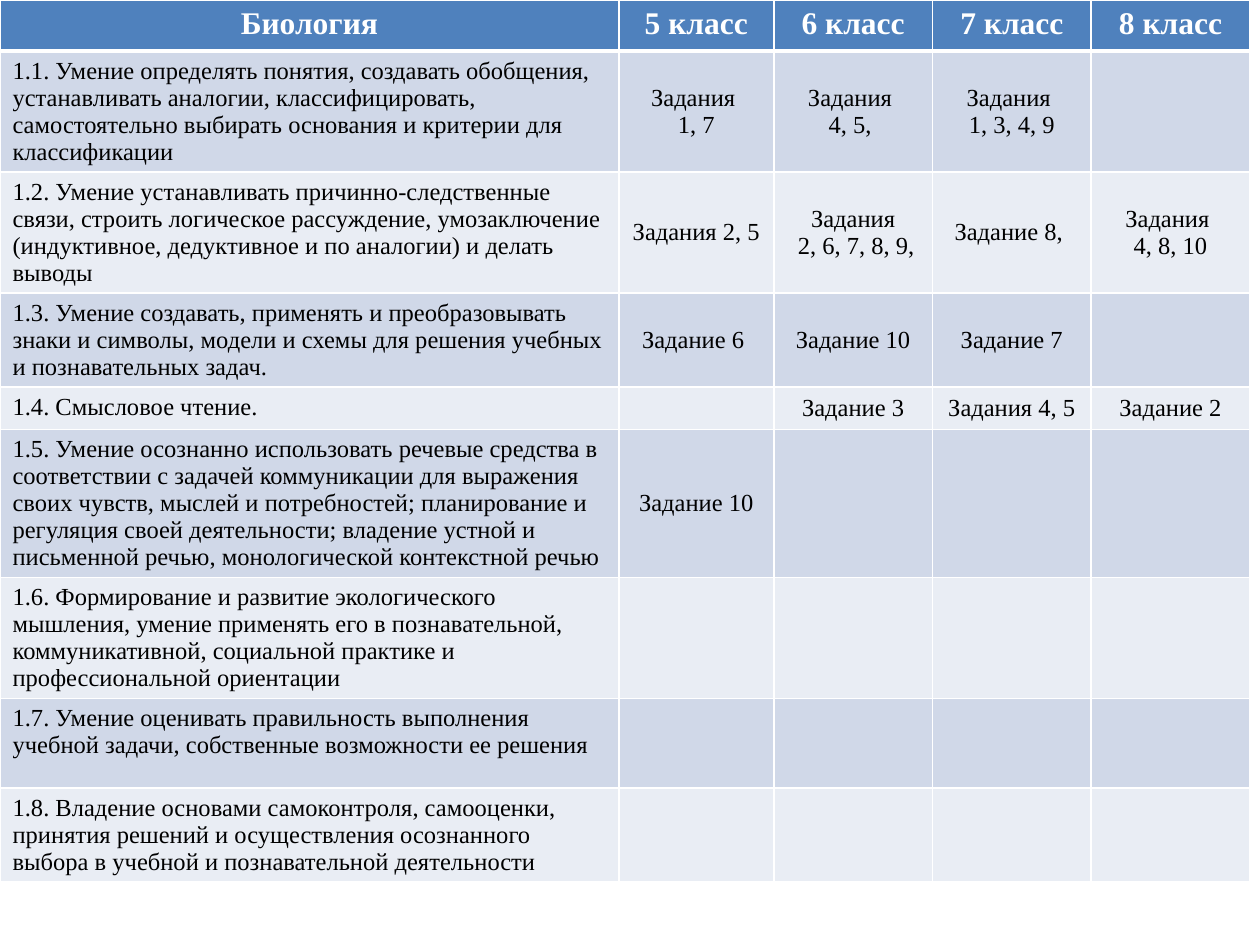
from dataclasses import dataclass

from lxml import etree
from pptx import Presentation
from pptx.dml.color import RGBColor
from pptx.enum.text import MSO_ANCHOR, PP_ALIGN
from pptx.oxml.ns import qn
from pptx.slide import Slide
from pptx.table import _Cell
from pptx.util import Pt

CENTER, LEFT = PP_ALIGN.CENTER, PP_ALIGN.LEFT
TOP, MIDDLE = MSO_ANCHOR.TOP, MSO_ANCHOR.MIDDLE


@dataclass(frozen=True)
class Theme:
    font: str = "Times New Roman"
    head_size: int = 18
    body_size: int = 14
    head_fill: str = "4F81BD"
    bands: tuple[str, str] = ("D0D8E8", "E9EDF4")
    head_text: str = "FFFFFF"
    body_text: str = "000000"
    border: str = "FFFFFF"
    thin: int = 1
    thick: int = 3


@dataclass(frozen=True)
class Skill:
    height: float
    text: str
    tasks: tuple[str, ...] = ("", "", "", "")


@dataclass(frozen=True)
class CellStyle:
    fill: str
    color: str
    size: int
    bold: bool
    align: PP_ALIGN
    anchor: MSO_ANCHOR
    top: int
    bottom: int


THEME = Theme()
COL_WIDTHS = (353.6, 88.6, 90.7, 90.7, 90.7)
HEAD_HEIGHT = 29.2
TABLE_HEIGHT = 534
HEADINGS = ("Биология", *(f"{grade} класс" for grade in range(5, 9)))
SKILLS = (
    Skill(38.2, "1.1. Умение определять понятия, создавать обобщения, устанавливать аналогии, "
          "классифицировать, самостоятельно выбирать основания и критерии для классификации",
          ("Задания \n1, 7", "Задания \n4, 5, ", "Задания \n1, 3, 4, 9", "")),
    Skill(39.6, "1.2. Умение устанавливать причинно-следственные связи, строить логическое "
          "рассуждение, умозаключение (индуктивное, дедуктивное и по аналогии) и делать выводы",
          ("Задания 2, 5 ", "Задания\n 2, 6, 7, 8, 9,", "Задание 8, ", "Задания \n4, 8, 10")),
    Skill(29.2, "1.3. Умение создавать, применять и преобразовывать знаки и символы, модели "
          "и схемы для решения учебных и познавательных задач.",
          ("Задание 6 ", "Задание 10", "Задание 7", "")),
    Skill(15.8, "1.4. Смысловое чтение.",
          ("", "Задание 3", "Задания 4, 5", "Задание 2")),
    Skill(41.8, "1.5. Умение осознанно использовать речевые средства в соответствии с задачей "
          "коммуникации для выражения своих чувств, мыслей и потребностей; планирование и "
          "регуляция своей деятельности; владение устной и письменной речью, "
          "монологической контекстной речью",
          ("Задание 10", "", "", "")),
    Skill(45.4, "1.6. Формирование и развитие экологического мышления, умение применять его в "
          "познавательной, коммуникативной, социальной практике и профессиональной ориентации"),
    Skill(51.1, "1.7. Умение оценивать правильность выполнения учебной задачи, собственные "
          "возможности ее решения"),
    Skill(51.1, "1.8. Владение основами самоконтроля, самооценки, принятия решений и "
          "осуществления осознанного выбора в учебной и познавательной деятельности"),
)


def set_borders(cell: _Cell, style: CellStyle) -> None:
    tc_pr = cell._tc.get_or_add_tcPr()
    widths = {"lnL": THEME.thin, "lnR": THEME.thin, "lnT": style.top, "lnB": style.bottom}
    for tag, width in widths.items():
        ln = etree.SubElement(tc_pr, qn(f"a:{tag}"), w=str(Pt(width)))
        fill = etree.SubElement(ln, qn("a:solidFill"))
        etree.SubElement(fill, qn("a:srgbClr"), val=THEME.border)


def fill_cell(cell: _Cell, text: str, style: CellStyle) -> None:
    set_borders(cell, style)
    cell.fill.solid()
    cell.fill.fore_color.rgb = RGBColor.from_string(style.fill)
    cell.vertical_anchor = style.anchor
    font = {"name": THEME.font, "size": Pt(style.size), "bold": style.bold}
    cell.text = text
    for p in cell.text_frame.paragraphs:
        p.alignment = style.align
        if not p.runs:
            p._p.get_or_add_endParaRPr().set("sz", str(style.size * 100))
        for r in p.runs:
            for name, value in font.items():
                setattr(r.font, name, value)
            r.font.color.rgb = RGBColor.from_string(style.color)


def body_style(row: int, col: int) -> CellStyle:
    align, anchor = (CENTER, MIDDLE) if col else (LEFT, TOP)
    top = THEME.thick if row == 0 else THEME.thin
    return CellStyle(THEME.bands[row % 2], THEME.body_text, THEME.body_size, False,
                     align, anchor, top, THEME.thin)


def add_skills_table(s: Slide) -> None:
    frame = s.shapes.add_table(len(SKILLS) + 1, len(HEADINGS), Pt(0), Pt(0),
                               Pt(sum(COL_WIDTHS)), Pt(TABLE_HEIGHT))
    table = frame.table
    for column, width in zip(table.columns, COL_WIDTHS):
        column.width = Pt(width)
    for row, height in zip(table.rows, (HEAD_HEIGHT, *(skill.height for skill in SKILLS))):
        row.height = Pt(height)
    frame.height = Pt(TABLE_HEIGHT)

    head_style = CellStyle(THEME.head_fill, THEME.head_text, THEME.head_size, True,
                           CENTER, TOP, THEME.thin, THEME.thick)
    for col, heading in enumerate(HEADINGS):
        fill_cell(table.cell(0, col), heading, head_style)
    for row, skill in enumerate(SKILLS):
        for col, text in enumerate((skill.text, *skill.tasks)):
            fill_cell(table.cell(row + 1, col), text, body_style(row, col))


def main() -> None:
    prs = Presentation()
    prs.slide_width, prs.slide_height = Pt(720), Pt(540)
    add_skills_table(prs.slides.add_slide(prs.slide_layouts[6]))
    prs.save("out.pptx")


if __name__ == "__main__":
    main()
